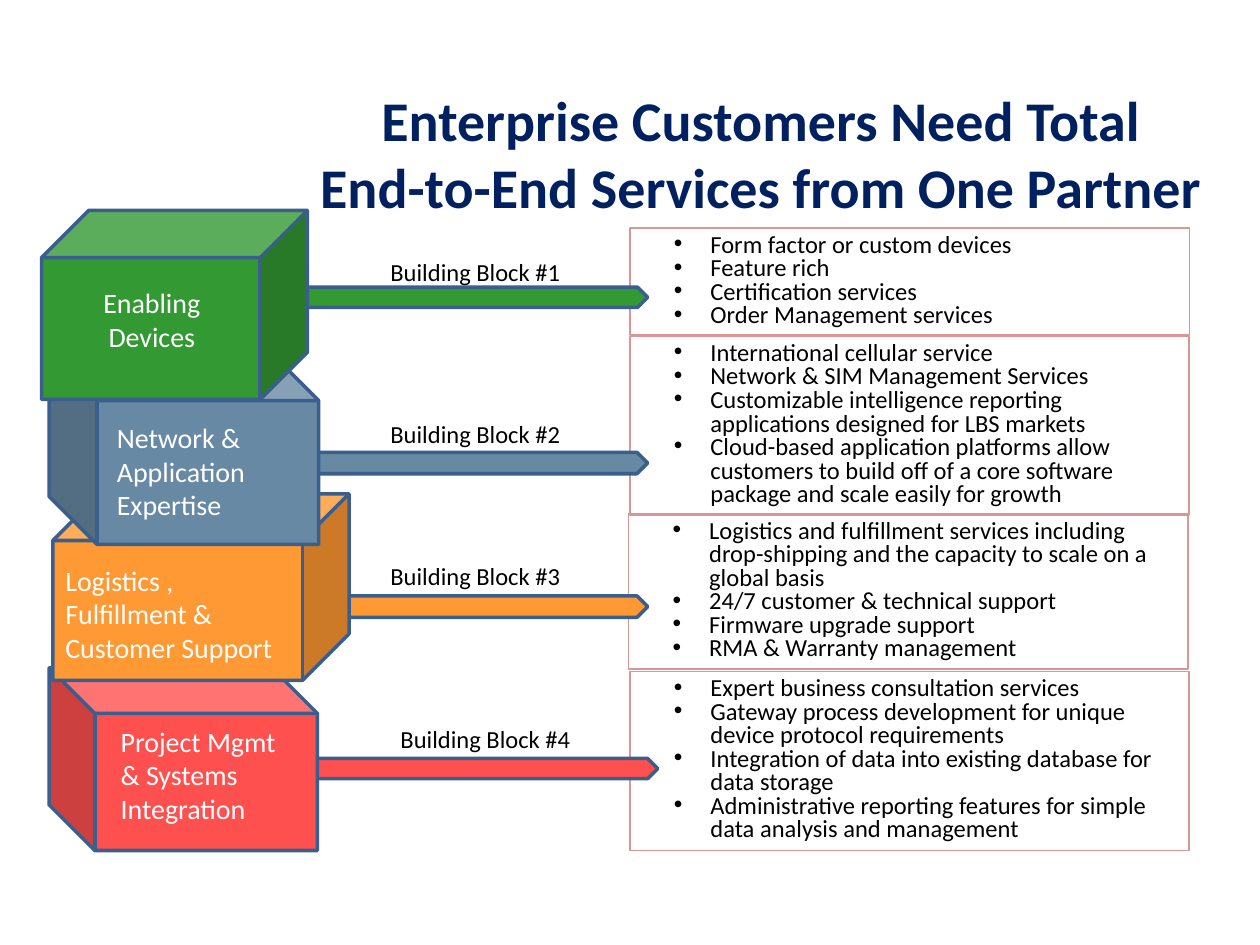
import pptx
import pptx.util
import pptx.dml.color
import pptx.enum.shapes
import pptx.enum.text
import pptx.oxml
import pptx.oxml.ns

Inches = pptx.util.Inches
Pt = pptx.util.Pt
RGBColor = pptx.dml.color.RGBColor
MSO_SHAPE = pptx.enum.shapes.MSO_SHAPE
PP_ALIGN = pptx.enum.text.PP_ALIGN
MSO_ANCHOR = pptx.enum.text.MSO_ANCHOR

FONT = "Calibri"
NAVY = RGBColor(0x00, 0x20, 0x60)
OUTLINE = RGBColor(0x3A, 0x5F, 0x8C)
PANEL_LINE = RGBColor(0xD9, 0x96, 0x94)
GREEN = RGBColor(0x33, 0x99, 0x33)
BLUE = RGBColor(0x68, 0x89, 0xA4)
ORANGE = RGBColor(0xFF, 0x99, 0x33)
RED = RGBColor(0xFF, 0x50, 0x50)
BLACK = RGBColor(0x00, 0x00, 0x00)
WHITE = RGBColor(0xFF, 0xFF, 0xFF)

BLOCKS = [
    {
        "color": RED,
        "cube": (0.39, 5.3, 2.13, 1.45),
        "flipped": True,
        "label": "Project Mgmt\v& Systems\vIntegration",
        "label_box": (0.86, 5.7, 1.54, 0.88),
        "arrow": (2.13, 6.02, 3.09, 0.16),
        "caption": "Building Block #4",
        "caption_box": (3.08, 5.7, 1.85, 0.33),
        "panel": (5, 5.33, 4.44, 1.42),
        "panel_line": 1,
        "services": [
            "Expert business consultation services",
            "Gateway process development for unique\vdevice protocol requirements",
            "Integration of data into existing database for\vdata storage",
            "Administrative reporting features for simple\vdata analysis and management",
        ],
    },
    {
        "color": ORANGE,
        "cube": (0.42, 3.92, 2.35, 1.48),
        "label": "Logistics ,\vFulfillment &\vCustomer Support",
        "label_box": (0.42, 4.42, 1.92, 0.91),
        "arrow": (2.29, 4.73, 2.85, 0.17),
        "caption": "Building Block #3",
        "caption_box": (3, 4.4, 1.85, 0.33),
        "panel": (4.99, 4.08, 4.44, 1.23),
        "panel_line": 0.75,
        "services": [
            "Logistics and fulfillment services including\v"
            "drop-shipping and the capacity to scale on a\vglobal basis",
            "24/7 customer & technical support",
            "Firmware upgrade support",
            "RMA & Warranty management",
        ],
    },
    {
        "color": BLUE,
        "cube": (0.39, 2.8, 2.14, 1.52),
        "flipped": True,
        "label": "Network &\vApplication\vExpertise",
        "label_box": (0.83, 3.29, 1.3, 0.94),
        "arrow": (1.97, 3.59, 3.17, 0.17),
        "caption": "Building Block #2",
        "caption_box": (3, 3.28, 1.85, 0.33),
        "panel": (5, 2.67, 4.44, 1.42),
        "panel_line": 1,
        "services": [
            "International cellular service",
            "Network & SIM Management Services",
            "Customizable intelligence reporting\vapplications designed for LBS markets",
            "Cloud-based application platforms allow\v"
            "customers to build off of a core software\vpackage and scale easily for growth",
        ],
    },
    {
        "color": GREEN,
        "cube": (0.33, 1.67, 2.11, 1.5),
        "label": "Enabling\vDevices",
        "label_box": (0.5, 2.22, 1.41, 0.72),
        "label_align": PP_ALIGN.CENTER,
        "arrow": (1.97, 2.28, 3.17, 0.16),
        "caption": "Building Block #1",
        "caption_box": (3, 1.99, 1.85, 0.33),
        "panel": (5, 1.81, 4.44, 0.85),
        "panel_line": 0.75,
        "services": [
            "Form factor or custom devices",
            "Feature rich",
            "Certification services",
            "Order Management services",
        ],
    },
]


def to_inches(box):
    return [Inches(length) for length in box]


def style_font(font, size, color, bold=False):
    font.name = FONT
    font.size = Pt(size)
    font.color.rgb = color
    font.bold = bold


def add_title(slide, box):
    title = slide.shapes.title
    title.left, title.top, title.width, title.height = to_inches(box)
    frame = title.text_frame
    frame.text = "Enterprise Customers Need Total\nEnd-to-End Services from One Partner"
    frame.auto_size = pptx.enum.text.MSO_AUTO_SIZE.NONE
    frame.vertical_anchor = MSO_ANCHOR.MIDDLE
    for paragraph in frame.paragraphs:
        paragraph.alignment = PP_ALIGN.CENTER
        style_font(paragraph.font, 32, NAVY, bold=True)


def add_outlined_shape(slide, kind, box, fill, line, line_width):
    shape = slide.shapes.add_shape(kind, *to_inches(box))
    shape.shadow.inherit = False
    if fill is None:
        shape.fill.background()
    else:
        shape.fill.solid()
        shape.fill.fore_color.rgb = fill
    shape.line.color.rgb = line
    shape.line.width = Pt(line_width)
    return shape


def add_text(slide, box, text, size, color, wrap, alignment=PP_ALIGN.LEFT):
    frame = slide.shapes.add_textbox(*to_inches(box)).text_frame
    frame.word_wrap = wrap
    paragraph = frame.paragraphs[0]
    paragraph.text = text
    paragraph.alignment = alignment
    style_font(paragraph.font, size, color)


def add_bullet(paragraph, margin, hanging):
    properties = paragraph._p.get_or_add_pPr()
    properties.set("marL", str(margin))
    properties.set("indent", str(-hanging))
    namespace = pptx.oxml.ns.nsdecls("a")
    properties.append(pptx.oxml.parse_xml(f'<a:buFont {namespace} typeface="Arial"/>'))
    properties.append(pptx.oxml.parse_xml(f'<a:buChar {namespace} char="•"/>'))


def add_services_panel(slide, box, services, line_width):
    panel = add_outlined_shape(slide, MSO_SHAPE.RECTANGLE, box, None, PANEL_LINE, line_width)
    frame = panel.text_frame
    frame.word_wrap = True
    frame.vertical_anchor = MSO_ANCHOR.TOP
    frame.text = "\n".join(services)
    for paragraph in frame.paragraphs:
        add_bullet(paragraph, Inches(0.54), Inches(0.29))
        paragraph.alignment = PP_ALIGN.LEFT
        paragraph.line_spacing = 0.8
        style_font(paragraph.font, 14, BLACK)


def add_block(slide, block):
    add_services_panel(slide, block["panel"], block["services"], block["panel_line"])
    add_outlined_shape(slide, MSO_SHAPE.CHEVRON, block["arrow"], block["color"], OUTLINE, 2)
    cube = add_outlined_shape(slide, MSO_SHAPE.CUBE, block["cube"], block["color"], OUTLINE, 2)
    if block.get("flipped"):
        cube.element.spPr.find(pptx.oxml.ns.qn("a:xfrm")).set("flipH", "1")
    add_text(slide, block["label_box"], block["label"], 16, WHITE, True,
             block.get("label_align", PP_ALIGN.LEFT))
    add_text(slide, block["caption_box"], block["caption"], 14, BLACK, False)


def main():
    presentation = pptx.Presentation()
    presentation.slide_width = Inches(10)
    presentation.slide_height = Inches(7.5)
    slide = presentation.slides.add_slide(presentation.slide_layouts[5])
    add_title(slide, (2.33, 0.75, 7.42, 0.92))
    for block in BLOCKS:
        add_block(slide, block)
    presentation.save("out.pptx")


if __name__ == "__main__":
    main()
